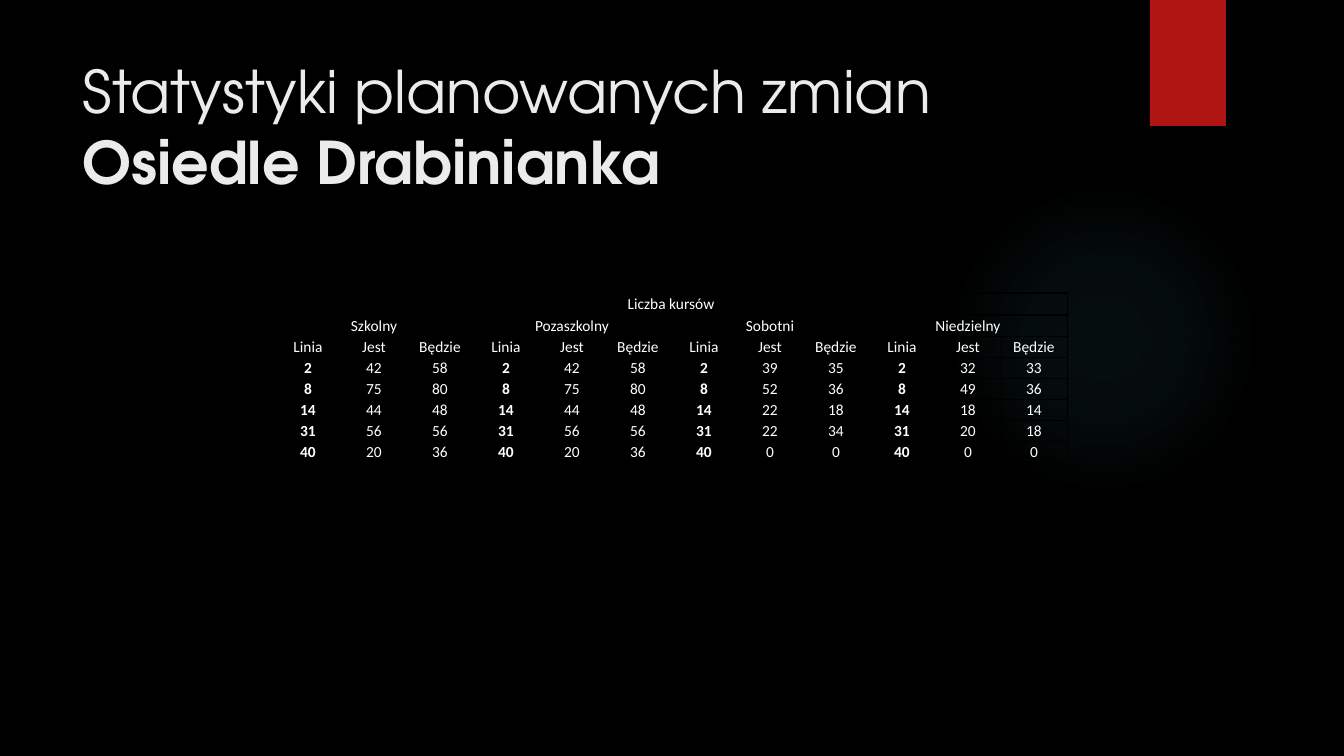
"""Build the slide of planned course changes for the Drabinianka estate."""
import pptx
import pptx.dml.color
import pptx.enum.shapes
import pptx.enum.text
import pptx.oxml
import pptx.oxml.ns
import pptx.util

HEADING = ("Statystyki planowanych zmian", "Osiedle Drabinianka")
CAPTION = "Liczba kursów"
COLUMNS = ("Linia", "Jest", "Będzie")
ROUTES = ("2", "8", "14", "31", "40")
WEEKDAY = ((42, 58), (75, 80), (44, 48), (56, 56), (20, 36))
DAYS = {
    "Szkolny": WEEKDAY,
    "Pozaszkolny": WEEKDAY,
    "Sobotni": ((39, 35), (52, 36), (22, 18), (22, 34), (0, 0)),
    "Niedzielny": ((32, 33), (49, 36), (18, 14), (20, 18), (0, 0)),
}

EMU_PER_PX = 914400 / 100.8
SLIDE = (1344, 756)
GLOW = (949, 184, 310, 310)
RIBBON = (1150, 0, 76, 126)
TITLE = (72, 50, 1037, 155)
TABLE_AT = (275, 293)
COLUMN_WIDTH, CAPTION_HEIGHT, ROW_HEIGHT = 66, 22, 21
GLOW_STOPS = ((0, 7), (36, 6), (69, 0))
HEAVY_VERTICALS, HEAVY_HORIZONTALS = (0, 3, 6), (0, 1)


def px(length):
    return round(length * EMU_PER_PX)


def box(lengths):
    return [px(length) for length in lengths]


def rgb(value):
    return pptx.dml.color.RGBColor.from_string(value)


def xml(text):
    return pptx.oxml.parse_xml(text.replace(">", f" {pptx.oxml.ns.nsdecls('a')}>", 1))


def add_panel(slide, kind, place):
    panel = slide.shapes.add_shape(kind, *box(place))
    panel.shadow.inherit = False
    panel.line.fill.background()
    panel.fill.solid()
    panel.fill.fore_color.rgb = rgb("B01513")
    return panel


def add_glow(slide):
    glow = add_panel(slide, pptx.enum.shapes.MSO_SHAPE.OVAL, GLOW)
    stops = "".join(
        f'<a:gs pos="{position * 1000}"><a:srgbClr val="50B9C1">'
        f'<a:alpha val="{alpha * 1000}"/></a:srgbClr></a:gs>'
        for position, alpha in GLOW_STOPS
    )
    gradient = xml(
        f'<a:gradFill><a:gsLst>{stops}</a:gsLst><a:path path="circle">'
        '<a:fillToRect l="50000" t="50000" r="50000" b="50000"/></a:path></a:gradFill>'
    )
    properties = glow.element.spPr
    properties.replace(properties.find(pptx.oxml.ns.qn("a:solidFill")), gradient)


def add_heading(slide):
    title = slide.shapes.title
    title.left, title.top, title.width, title.height = box(TITLE)
    frame = title.text_frame
    frame.word_wrap = True
    frame.auto_size = pptx.enum.text.MSO_AUTO_SIZE.NONE
    frame.vertical_anchor = pptx.enum.text.MSO_ANCHOR.TOP
    line = frame.paragraphs[0]
    line.alignment = pptx.enum.text.PP_ALIGN.LEFT
    line.font.size = pptx.util.Pt(42)
    line.font.name = "TeX Gyre Adventor"
    line.font.color.rgb = rgb("EBEBEB")
    subject, estate = HEADING
    line.add_run().text = subject
    line.add_line_break()
    estate_run = line.add_run()
    estate_run.text = estate
    estate_run.font.bold = True


def set_borders(cell, row, column):
    last = column + (cell.span_width if cell.is_merge_origin else 1)
    heavy = {
        "L": column in HEAVY_VERTICALS,
        "R": last in HEAVY_VERTICALS,
        "T": row in HEAVY_HORIZONTALS,
        "B": row + 1 in HEAVY_HORIZONTALS,
    }
    properties = cell._tc.get_or_add_tcPr()
    for side, is_heavy in heavy.items():
        width = pptx.util.Pt(1 if is_heavy else 0.5)
        properties.append(xml(
            f'<a:ln{side} w="{width}"><a:solidFill>'
            f'<a:srgbClr val="000000"/></a:solidFill></a:ln{side}>'
        ))


def format_cell(cell, text, bold):
    cell.margin_left = cell.margin_right = cell.margin_top = px(1)
    cell.margin_bottom = 0
    cell.vertical_anchor = pptx.enum.text.MSO_ANCHOR.MIDDLE
    cell.fill.background()
    cell.text = text
    entry = cell.text_frame.paragraphs[0]
    entry.alignment = pptx.enum.text.PP_ALIGN.CENTER
    entry.font.size = pptx.util.Pt(11)
    entry.font.name = "Calibri"
    entry.font.bold = bold
    entry.font.color.rgb = rgb("FFFFFF")


def course_rows():
    span = len(COLUMNS)
    width = span * len(DAYS)
    rows = [[CAPTION] + [""] * (width - 1)]
    rows.append([text for day in DAYS for text in [day] + [""] * (span - 1)])
    rows.append(list(COLUMNS) * len(DAYS))
    for index, route in enumerate(ROUTES):
        rows.append([
            str(value) for counts in DAYS.values() for value in (route, *counts[index])
        ])
    return rows


def add_courses(slide):
    rows = course_rows()
    span, width = len(COLUMNS), len(rows[0])
    heights = [CAPTION_HEIGHT] + [ROW_HEIGHT] * (len(rows) - 1)
    place = box((*TABLE_AT, COLUMN_WIDTH * width, sum(heights)))
    courses = slide.shapes.add_table(len(rows), width, *place).table
    courses.first_row = courses.horz_banding = False
    for column in courses.columns:
        column.width = px(COLUMN_WIDTH)
    for row, height in zip(courses.rows, heights):
        row.height = px(height)
    courses.cell(0, 0).merge(courses.cell(0, width - 1))
    for start in range(0, width, span):
        courses.cell(1, start).merge(courses.cell(1, start + span - 1))
    for row, texts in enumerate(rows):
        for column, text in enumerate(texts):
            cell = courses.cell(row, column)
            set_borders(cell, row, column)
            format_cell(cell, text, row > 2 and column % span == 0)


def main():
    deck = pptx.Presentation()
    deck.slide_width, deck.slide_height = box(SLIDE)
    slide = deck.slides.add_slide(deck.slide_layouts[5])
    slide.background.fill.solid()
    slide.background.fill.fore_color.rgb = rgb("000000")
    add_glow(slide)
    add_panel(slide, pptx.enum.shapes.MSO_SHAPE.RECTANGLE, RIBBON)
    add_heading(slide)
    add_courses(slide)
    deck.save("out.pptx")


if __name__ == "__main__":
    main()
